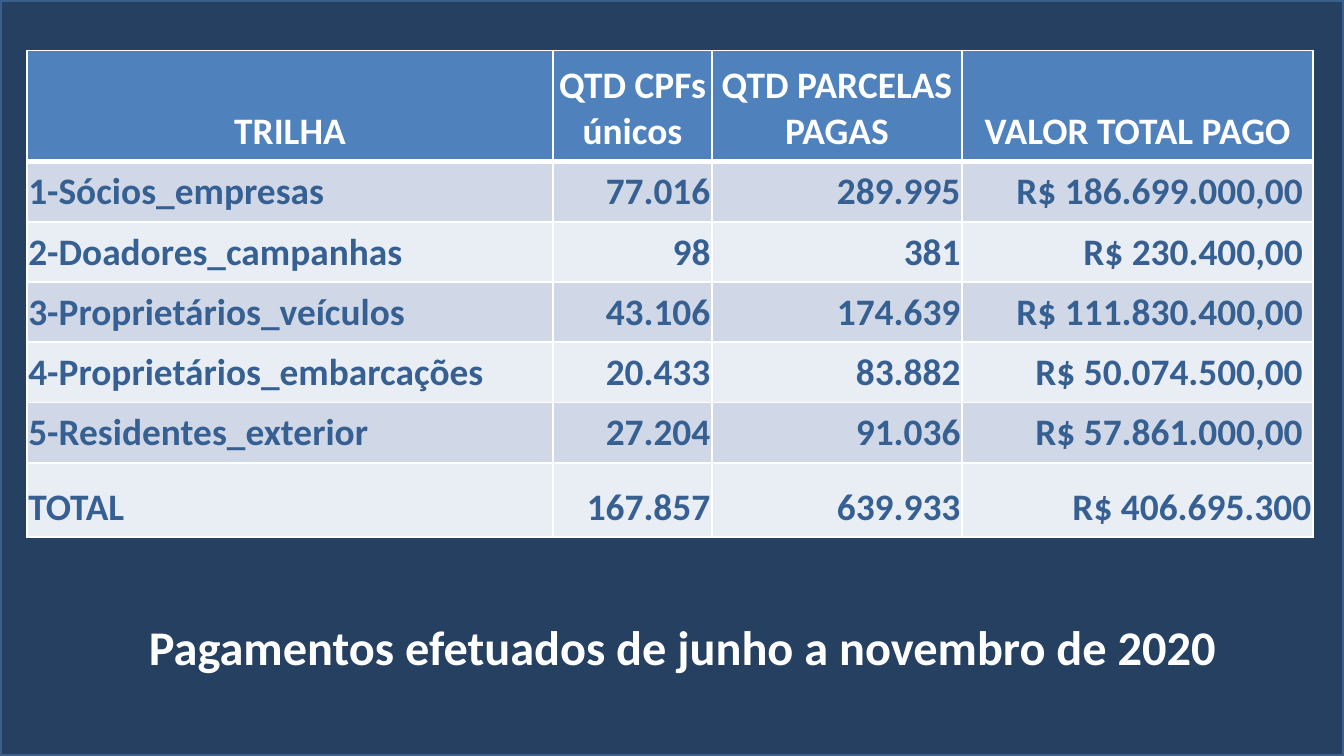
from lxml import etree
from pptx import Presentation
from pptx.dml.color import RGBColor
from pptx.enum.shapes import MSO_SHAPE
from pptx.enum.text import MSO_ANCHOR, PP_ALIGN
from pptx.oxml.ns import qn
from pptx.util import Pt

RECTANGLE = MSO_SHAPE.RECTANGLE
BOTTOM, MIDDLE = MSO_ANCHOR.BOTTOM, MSO_ANCHOR.MIDDLE
LEFT, CENTER, RIGHT = PP_ALIGN.LEFT, PP_ALIGN.CENTER, PP_ALIGN.RIGHT

WHITE = RGBColor(0xFF, 0xFF, 0xFF)
NAVY = RGBColor(0x25, 0x40, 0x61)
OUTLINE_BLUE = RGBColor(0x3A, 0x5F, 0x8C)
HEADER_BLUE = RGBColor(0x4F, 0x81, 0xBD)
TEXT_BLUE = RGBColor(0x37, 0x60, 0x92)
BANDS = (RGBColor(0xD0, 0xD8, 0xE8), RGBColor(0xE9, 0xED, 0xF4))

ROWS = [
    ("TRILHA", "QTD CPFs únicos", "QTD PARCELAS PAGAS", "VALOR TOTAL PAGO"),
    ("1-Sócios_empresas", "77.016", "289.995", " R$ 186.699.000,00 "),
    ("2-Doadores_campanhas", "98", "381", " R$ 230.400,00 "),
    ("3-Proprietários_veículos", "43.106", "174.639", " R$ 111.830.400,00 "),
    ("4-Proprietários_embarcações", "20.433", "83.882", " R$ 50.074.500,00 "),
    ("5-Residentes_exterior", "27.204", "91.036", " R$ 57.861.000,00 "),
    ("TOTAL", "167.857", "639.933", " R$ 406.695.300"),
]
CAPTION = "Pagamentos efetuados de junho a novembro de 2020"

SLIDE_WIDTH, SLIDE_HEIGHT = 720, 405
TABLE_LEFT, TABLE_TOP = 14.4, 27
COLUMN_WIDTHS = [282, 85, 134, 188]
ROW_HEIGHTS = [59.5] + [32.3] * 5 + [39.9]
CELL_FORMAT = {
    "vertical_anchor": BOTTOM,
    "margin_left": Pt(0.75),
    "margin_top": Pt(0.75),
    "margin_right": Pt(0.75),
    "margin_bottom": Pt(3.6),
}


def write_text(paragraph, text, size, color, alignment):
    paragraph.text = text
    paragraph.alignment = alignment
    font_format = {"name": "Calibri", "size": Pt(size), "bold": True}
    for name, value in font_format.items():
        setattr(paragraph.runs[0].font, name, value)
    paragraph.runs[0].font.color.rgb = color


def add_borders(cell, bottom_width):
    """Draw white cell borders; the line elements must precede the fill."""
    properties = cell._tc.get_or_add_tcPr()
    widths = {"lnL": 1, "lnR": 1, "lnT": 1, "lnB": bottom_width}
    for tag, width in widths.items():
        line = etree.SubElement(properties, qn(f"a:{tag}"), w=str(Pt(width)))
        fill = etree.SubElement(line, qn("a:solidFill"))
        etree.SubElement(fill, qn("a:srgbClr"), val=str(WHITE))


def add_background(slide):
    background = slide.shapes.add_shape(
        RECTANGLE, 0, 0, Pt(SLIDE_WIDTH), Pt(SLIDE_HEIGHT))
    background.shadow.inherit = False
    background.fill.solid()
    background.fill.fore_color.rgb = NAVY
    background.line.color.rgb = OUTLINE_BLUE
    background.line.width = Pt(2)


def add_payments_table(slide):
    table = slide.shapes.add_table(
        len(ROWS), len(COLUMN_WIDTHS), Pt(TABLE_LEFT), Pt(TABLE_TOP),
        Pt(sum(COLUMN_WIDTHS)), Pt(sum(ROW_HEIGHTS))).table
    for column, width in zip(table.columns, COLUMN_WIDTHS):
        column.width = Pt(width)
    for row, height in zip(table.rows, ROW_HEIGHTS):
        row.height = Pt(height)
    for row_index, row in enumerate(ROWS):
        is_header = row_index == 0
        for column_index, text in enumerate(row):
            cell = table.cell(row_index, column_index)
            for name, value in CELL_FORMAT.items():
                setattr(cell, name, value)
            add_borders(cell, 3 if is_header else 1)
            cell.fill.solid()
            if is_header:
                cell.fill.fore_color.rgb = HEADER_BLUE
                color, alignment = WHITE, CENTER
            else:
                cell.fill.fore_color.rgb = BANDS[(row_index - 1) % 2]
                color = TEXT_BLUE
                alignment = LEFT if column_index == 0 else RIGHT
            write_text(cell.text_frame.paragraphs[0], text, 20, color, alignment)


def add_caption(slide):
    frame = slide.shapes.add_textbox(
        Pt(72.7), Pt(334), Pt(602.6), Pt(32.4)).text_frame
    frame.word_wrap = True
    frame.vertical_anchor = MIDDLE
    paragraph = frame.paragraphs[0]
    write_text(paragraph, CAPTION, 25.9, WHITE, LEFT)
    paragraph.line_spacing = 0.7


def main():
    presentation = Presentation()
    presentation.slide_width = Pt(SLIDE_WIDTH)
    presentation.slide_height = Pt(SLIDE_HEIGHT)
    slide = presentation.slides.add_slide(presentation.slide_layouts[6])
    add_background(slide)
    add_payments_table(slide)
    add_caption(slide)
    presentation.save("out.pptx")


if __name__ == "__main__":
    main()
